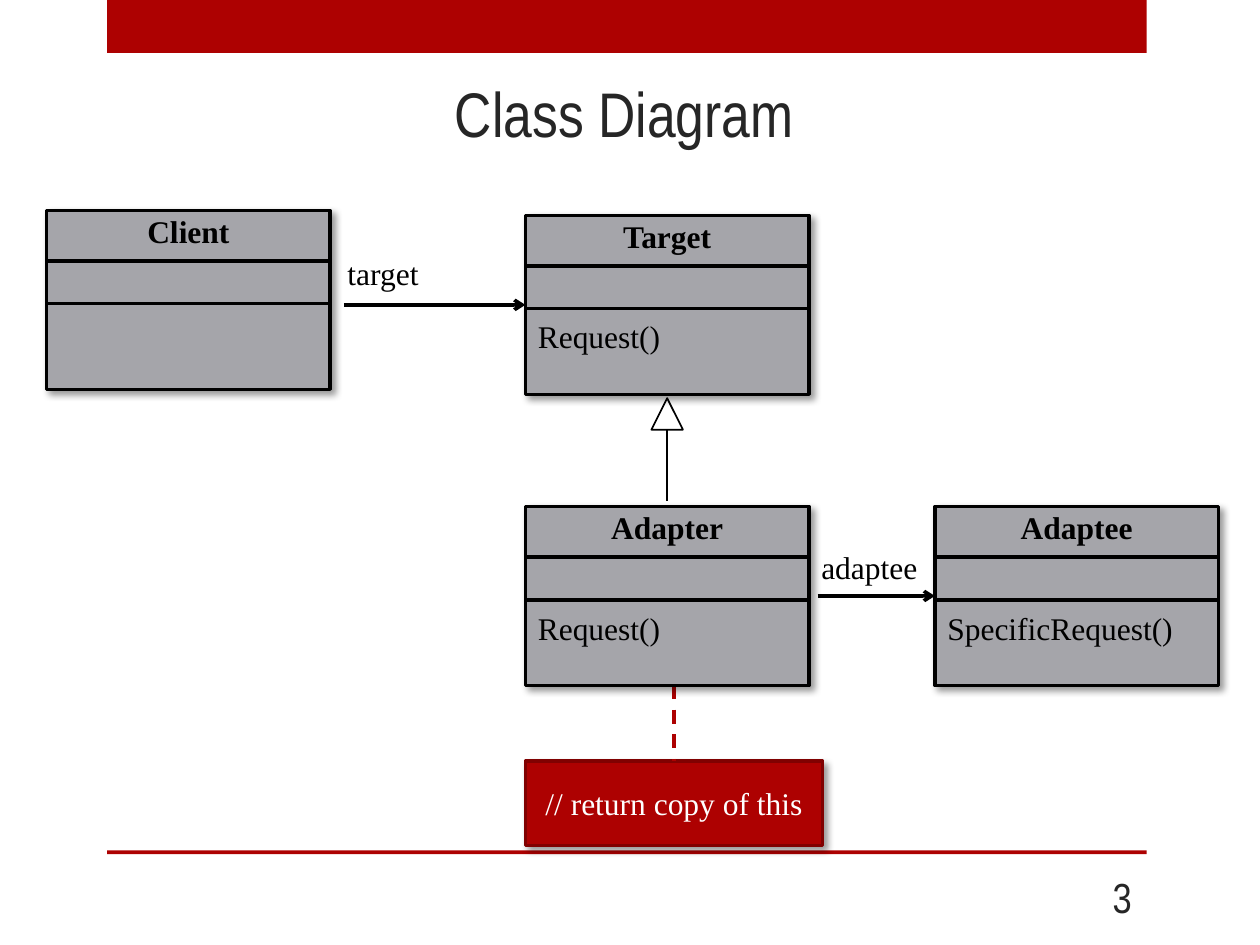
from lxml import etree
from pptx import Presentation
from pptx import util as u
from pptx.dml.color import RGBColor
from pptx.enum import dml, shapes, text
from pptx.oxml.ns import qn

# Content: name, left, top, operation
CLASSES = [
    ("Client", 0.37, 1.67, ""),
    ("Target", 4.17, 1.71, "Request()"),
    ("Adapter", 4.17, 4.02, "Request()"),
    ("Adaptee", 7.42, 4.02, "SpecificRequest()"),
]
# Role, class pointed at, arrow start, label left, label top, label width
ROLES = [
    ("target", "Target", 2.73, 2.66, 1.97, 0.77),
    ("adaptee", "Adaptee", 6.49, 6.42, 4.3, 0.97),
]
NOTE = "// return copy of this"

RED, DARK, GREY, BLACK, WHITE = "AD0101", "262626", "A5A5AA", "000000", "FFFFFF"
HEAD, BODY = "Arial Narrow", "Times New Roman"
WIDE, HIGH = 2.25, 1.42      # class box
RULES = (0.4, 0.74)          # dividers below the top of a class box
ROW = 0.4                    # height of a line of text
LEFT, MID, RIGHT = text.PP_ALIGN.LEFT, text.PP_ALIGN.CENTER, text.PP_ALIGN.RIGHT

prs = Presentation()
prs.slide_width, prs.slide_height = u.Inches(10), u.Inches(7.5)
slide = prs.slides.add_slide(prs.slide_layouts[6])
draw = slide.shapes


def color(code):
    return RGBColor.from_string(code)


def inches(*nums):
    return [u.Inches(n) for n in nums]


def write(shape, words, size=18, font=BODY, ink=BLACK, align=LEFT, bold=False):
    frame = shape.text_frame
    frame.word_wrap = True
    frame.vertical_anchor = text.MSO_ANCHOR.MIDDLE
    para = frame.paragraphs[0]
    para.text, para.alignment = words, align
    para.font.size, para.font.name = u.Pt(size), font
    para.font.bold, para.font.color.rgb = bold, color(ink)


def label(words, x, y, w, h=ROW, **style):
    write(draw.add_textbox(*inches(x, y, w, h)), words, **style)


def box(x, y, w, h, fill=None, edge=None, width=2, kind="RECTANGLE"):
    shape = draw.add_shape(shapes.MSO_SHAPE[kind], *inches(x, y, w, h))
    shape.shadow.inherit = False
    if fill:
        shape.fill.solid()
        shape.fill.fore_color.rgb = color(fill)
    else:
        shape.fill.background()
    if edge:
        shape.line.color.rgb = color(edge)
        shape.line.width = u.Pt(width)
    else:
        shape.line.fill.background()
    return shape


def shade(shape):
    """Soft black shadow down and to the right."""
    effects = shape._element.spPr.find(qn("a:effectLst"))
    outer = etree.SubElement(effects, qn("a:outerShdw"), blurRad=str(u.Pt(4)),
                             dist=str(u.Pt(3)), dir="2700000", algn="tl", rotWithShape="0")
    ink = etree.SubElement(outer, qn("a:srgbClr"), val=BLACK)
    etree.SubElement(ink, qn("a:alpha"), val="40000")


def line(x1, y1, x2, y2, ink=BLACK, width=2, arrow=False):
    link = draw.add_connector(shapes.MSO_CONNECTOR.STRAIGHT, *inches(x1, y1, x2, y2))
    link.line.color.rgb = color(ink)
    link.line.width = u.Pt(width)
    if arrow:
        etree.SubElement(link.line._get_or_add_ln(), qn("a:tailEnd"), type="arrow")
    etree.SubElement(link._element.spPr, qn("a:effectLst"))
    return link


# Page frame, title and number
for y, h in ((0, 0.42), (6.75, 0.03)):
    box(0.85, y, 8.25, h, RED)
label("Class Diagram", 0.83, 0.53, 8.25, 0.72, size=36, font=HEAD, ink=DARK, align=MID)
label("3", 8.25, 6.92, 0.83, size=24, font=HEAD, ink=DARK, align=RIGHT)

# Note with its dashed tie, which starts behind the Adapter box
note = box(4.17, 6.04, 2.36, 0.67, RED, "800101", 1.75)
shade(note)
write(note, NOTE, ink=WHITE, align=MID)
tie = line(5.35, 5.24, 5.35, 6.04, RED)
tie.line.dash_style = dml.MSO_LINE.DASH
tie.end_connect(note, 0)

# Class boxes
boxes = {}
for name, x, y, call in CLASSES:
    boxes[name] = box(x, y, WIDE, HIGH, GREY, BLACK)
    shade(boxes[name])
    for drop in RULES:
        line(x, y + drop, x + WIDE, y + drop)
    label(name, x, y - 0.04, WIDE, align=MID, bold=True)
    if call:
        label(call, x, y + 0.76, WIDE)

# Role arrows, each ending at the left side of its class
for role, name, start, x, y, w in ROLES:
    goal = boxes[name]
    level = (goal.top + goal.height / 2) / u.Inches(1)
    line(start, level, goal.left / u.Inches(1), level, arrow=True).end_connect(goal, 1)
    label(role, x, y, w)

# Inheritance from Target to Adapter
stem = 4.17 + WIDE / 2
box(stem - 0.125, 3.16, 0.25, 0.25, edge=BLACK, width=1, kind="ISOSCELES_TRIANGLE")
line(stem, 3.41, stem, 3.98, width=1.25)

prs.save("out.pptx")
